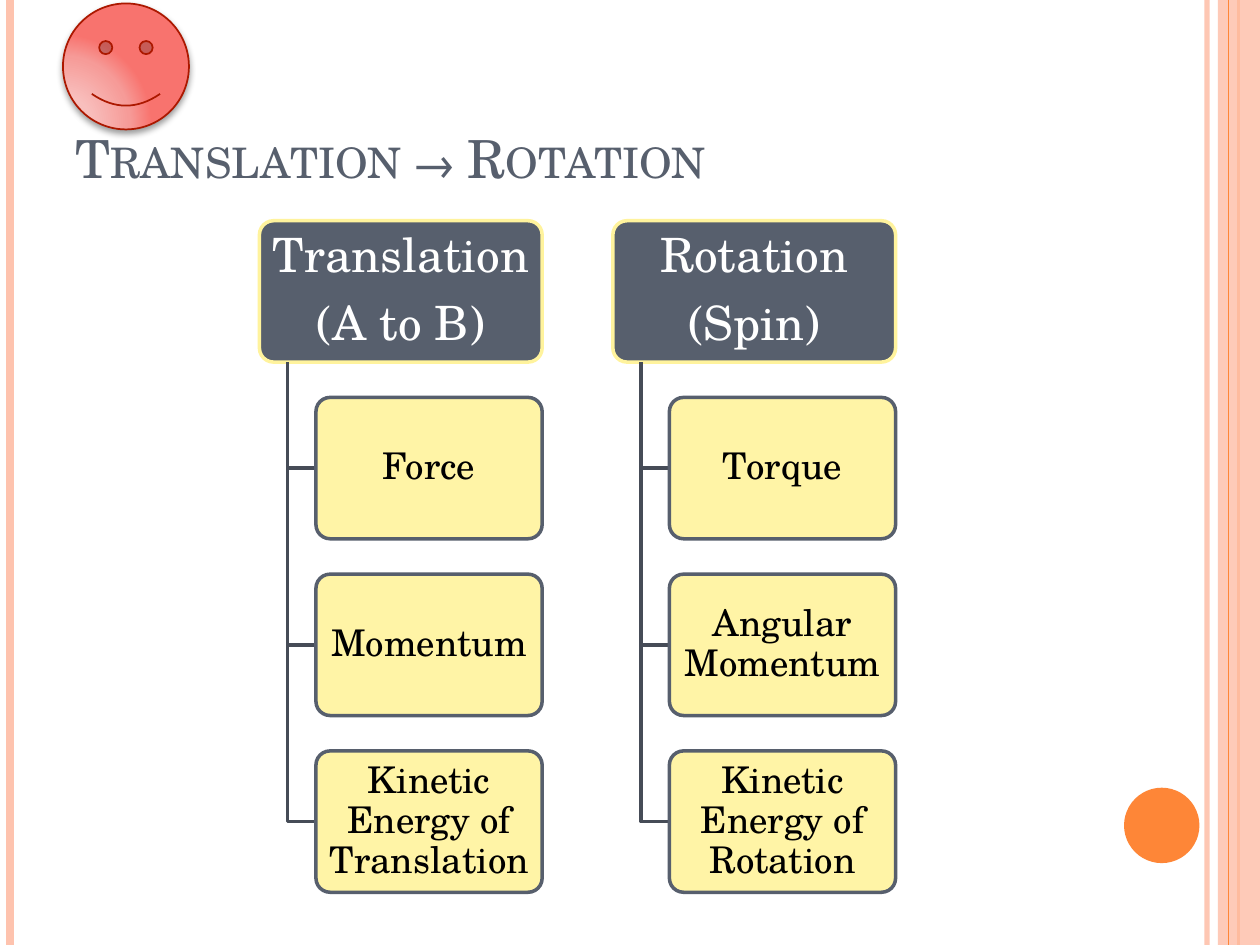
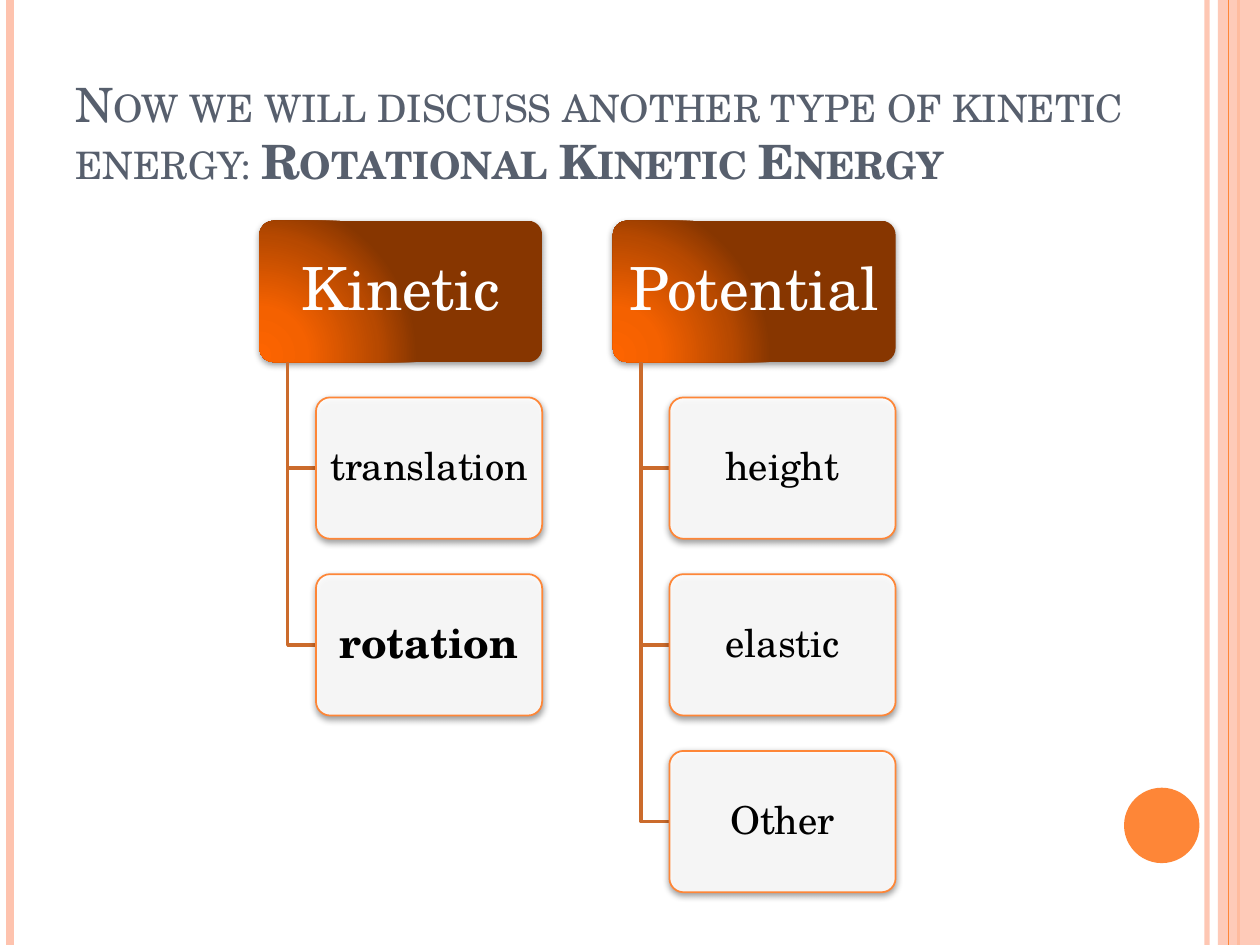
from dataclasses import dataclass
from typing import Optional

from lxml.etree import SubElement
from pptx import Presentation
from pptx.dml.color import RGBColor
from pptx.enum.shapes import MSO_CONNECTOR, MSO_SHAPE
from pptx.enum.text import MSO_ANCHOR, PP_ALIGN
from pptx.oxml.ns import qn
from pptx.util import Cm, Pt

FONT = "TeX Gyre Schola"
PAGE_W, PAGE_H = 25.4, 19.05
COLORS = {
    "slate": "575F6D", "slate_dark": "464C57", "yellow": "FFF39D",
    "orange": "FE8637", "orange_dark": "CB6B2C", "peach": "FEC3AE",
    "white": "FFFFFF", "black": "000000", "smiley_line": "AC1800",
}
GRADIENTS = {
    "ember": [(0, "FD6400"), (30, "F46100"), (75, "B74900"), (100, "873600")],
    "rose": [(0, "F8C5C3"), (30, "F8BFBD"), (75, "F69B98"), (100, "F8736E")],
}


@dataclass
class BoxStyle:
    fill: str
    text: str
    size: int
    inset: tuple  # horizontal, vertical in cm
    line: Optional[str] = None
    line_width: float = 1
    opacity: int = 100
    shadow: bool = False


@dataclass
class TreeStyle:
    head: BoxStyle
    item: BoxStyle
    branch: str


SLATE_TREE = TreeStyle(
    BoxStyle("slate", "white", 27, (0.15, 0.1), "yellow", 2),
    BoxStyle("yellow", "black", 21, (0.1, 0.08), "slate", 2, opacity=90),
    "slate_dark")
ORANGE_TREE = TreeStyle(
    BoxStyle("ember", "white", 34, (0.18, 0.13), shadow=True),
    BoxStyle("white", "black", 22, (0.13, 0.08), "orange", 1, opacity=90, shadow=True),
    "orange_dark")


def rgb(name):
    return RGBColor.from_string(COLORS[name])


def set_opacity(shape, percent):
    """Make the first colour of the shape partly transparent."""
    if percent < 100:
        color = shape.element.spPr.find(".//" + qn("a:srgbClr"))
        SubElement(color, qn("a:alpha"), val=str(percent * 1000))


def fill_gradient(shape, stops):
    """Radial gradient that starts at the lower left."""
    shape.fill.gradient()
    gradient = shape.element.spPr.find(qn("a:gradFill"))
    for child in list(gradient):
        gradient.remove(child)
    stop_list = SubElement(gradient, qn("a:gsLst"))
    for position, color in stops:
        stop = SubElement(stop_list, qn("a:gs"), pos=str(position * 1000))
        SubElement(stop, qn("a:srgbClr"), val=color)
    circle = SubElement(gradient, qn("a:path"), path="circle")
    SubElement(circle, qn("a:fillToRect"), l="5000", t="100000", r="120000", b="10000")


def add_shadow(shape, distance, opacity):
    effects = shape.element.spPr.find(qn("a:effectLst"))
    shadow = SubElement(effects, qn("a:outerShdw"), blurRad=str(Pt(4)),
                        dist=str(Pt(distance)), dir="5400000", rotWithShape="0")
    color = SubElement(shadow, qn("a:srgbClr"), val=COLORS["black"])
    SubElement(color, qn("a:alpha"), val=str(opacity * 1000))


def add_filled(slide, kind, box, fill, line=None, line_width=1, opacity=100):
    shape = slide.shapes.add_shape(kind, *map(Cm, box))
    shape.shadow.inherit = False
    if fill in GRADIENTS:
        fill_gradient(shape, GRADIENTS[fill])
    else:
        shape.fill.solid()
        shape.fill.fore_color.rgb = rgb(fill)
        set_opacity(shape, opacity)
    if line:
        shape.line.color.rgb = rgb(line)
        shape.line.width = Pt(line_width)
    else:
        shape.line.fill.background()
    return shape


def add_run(paragraph, text, size, color, bold=False):
    run = paragraph.add_run()
    run.text = text
    run.font.name = FONT
    run.font.size = Pt(size)
    run.font.bold = bold
    run.font.color.rgb = rgb(color)
    return run


# Shared frame: side stripes, right band and page dot
def add_stripe(slide, x, color, width, opacity=100):
    stripe = slide.shapes.add_connector(
        MSO_CONNECTOR.STRAIGHT, Cm(x), 0, Cm(x), Cm(PAGE_H))
    stripe.line.color.rgb = rgb(color)
    stripe.line.width = Pt(width)
    set_opacity(stripe, opacity)
    SubElement(stripe.element.spPr, qn("a:effectLst"))


def add_frame(slide):
    add_stripe(slide, 24.33, "peach", 3, 93)
    add_stripe(slide, 0.21, "peach", 4.5)
    add_stripe(slide, 24.97, "orange", 1.5)
    add_filled(slide, MSO_SHAPE.RECTANGLE, (24.55, 0, PAGE_W - 24.55, PAGE_H),
               "peach", opacity=87)
    add_stripe(slide, 24.77, "orange", 0.75)
    add_filled(slide, MSO_SHAPE.OVAL, (22.66, 15.88, 1.52, 1.52), "orange")


def add_title(slide, box, size, parts):
    frame = slide.shapes.add_textbox(*map(Cm, box)).text_frame
    frame.word_wrap = True
    frame.vertical_anchor = MSO_ANCHOR.BOTTOM
    for text, bold in parts:
        run = add_run(frame.paragraphs[0], text, size, "slate", bold)
        run._r.get_or_add_rPr().set("cap", "small")


# Hierarchy: each column has a head and items hanging from it
def add_box(slide, box, style, lines, size=None, bold=False):
    shape = add_filled(slide, MSO_SHAPE.ROUNDED_RECTANGLE, box, style.fill,
                       style.line, style.line_width, style.opacity)
    shape.adjustments[0] = 0.1
    if style.shadow:
        add_shadow(shape, 1.6, 42)
    frame = shape.text_frame
    frame.word_wrap = True
    frame.vertical_anchor = MSO_ANCHOR.MIDDLE
    frame.margin_left = frame.margin_right = Cm(style.inset[0])
    frame.margin_top = frame.margin_bottom = Cm(style.inset[1])
    size = size or style.size
    for index, text in enumerate(lines):
        paragraph = frame.paragraphs[0] if index == 0 else frame.add_paragraph()
        paragraph.alignment = PP_ALIGN.CENTER
        paragraph.line_spacing = 0.9
        if index < len(lines) - 1:
            paragraph.space_after = Pt(round(size * 0.35, 1))
        add_run(paragraph, text, size, style.text, bold)


def add_branch(slide, x, top, bottom, end_x, color):
    builder = slide.shapes.build_freeform(Cm(x), Cm(top))
    builder.add_line_segments([(Cm(x), Cm(bottom)), (Cm(end_x), Cm(bottom))], close=False)
    branch = builder.convert_to_shape()
    branch.shadow.inherit = False
    branch.fill.background()
    branch.line.color.rgb = rgb(color)
    branch.line.width = Pt(2)


def add_column(slide, left, top, width, style, head, items):
    height = width / 2
    add_box(slide, (left, top, width, height), style.head, head)
    item_left = left + 0.2 * width
    for row, (text, *emphasis) in enumerate(items, start=1):
        item_top = top + row * 1.25 * height
        add_branch(slide, left + 0.1 * width, top + height,
                   item_top + height / 2, item_left, style.branch)
        add_box(slide, (item_left, item_top, 0.8 * width, height),
                style.item, [text], *emphasis)


def add_hierarchy(slide, left, top, head_width, style, columns):
    for index, (head, items) in enumerate(columns):
        add_column(slide, left + index * 1.25 * head_width, top, head_width,
                   style, head, items)


def add_smiley(slide, box):
    smiley = add_filled(slide, MSO_SHAPE.SMILEY_FACE, box, "rose", "smiley_line")
    add_shadow(smiley, 2, 40)


def build_slide(deck, title_width, title_size, title, style, columns):
    slide = deck.slides.add_slide(deck.slide_layouts[6])
    add_frame(slide)
    add_title(slide, (1.27, 0.76, title_width, 3.18), title_size, title)
    add_hierarchy(slide, 5.23, 4.45, 5.7, style, columns)
    return slide


def main():
    deck = Presentation()
    deck.slide_width, deck.slide_height = Cm(PAGE_W), Cm(PAGE_H)

    # Translation compared with rotation
    comparison = build_slide(
        deck, 22.02, 30, [("Translation → Rotation", False)], SLATE_TREE,
        [(["Translation", "(A to B)"],
          [("Force",), ("Momentum",), ("Kinetic Energy of Translation",)]),
         (["Rotation", "(Spin)"],
          [("Torque",), ("Angular Momentum",), ("Kinetic Energy of Rotation",)])])
    add_smiley(comparison, (1.27, 0.07, 2.54, 2.54))

    # Types of energy
    build_slide(
        deck, 23.06, 27,
        [("Now we will discuss another type of kinetic energy: ", False),
         ("Rotational Kinetic Energy", True)], ORANGE_TREE,
        [(["Kinetic"], [("translation",), ("rotation", 24, True)]),
         (["Potential"], [("height",), ("elastic",), ("Other",)])])

    deck.save("out.pptx")


if __name__ == "__main__":
    main()
